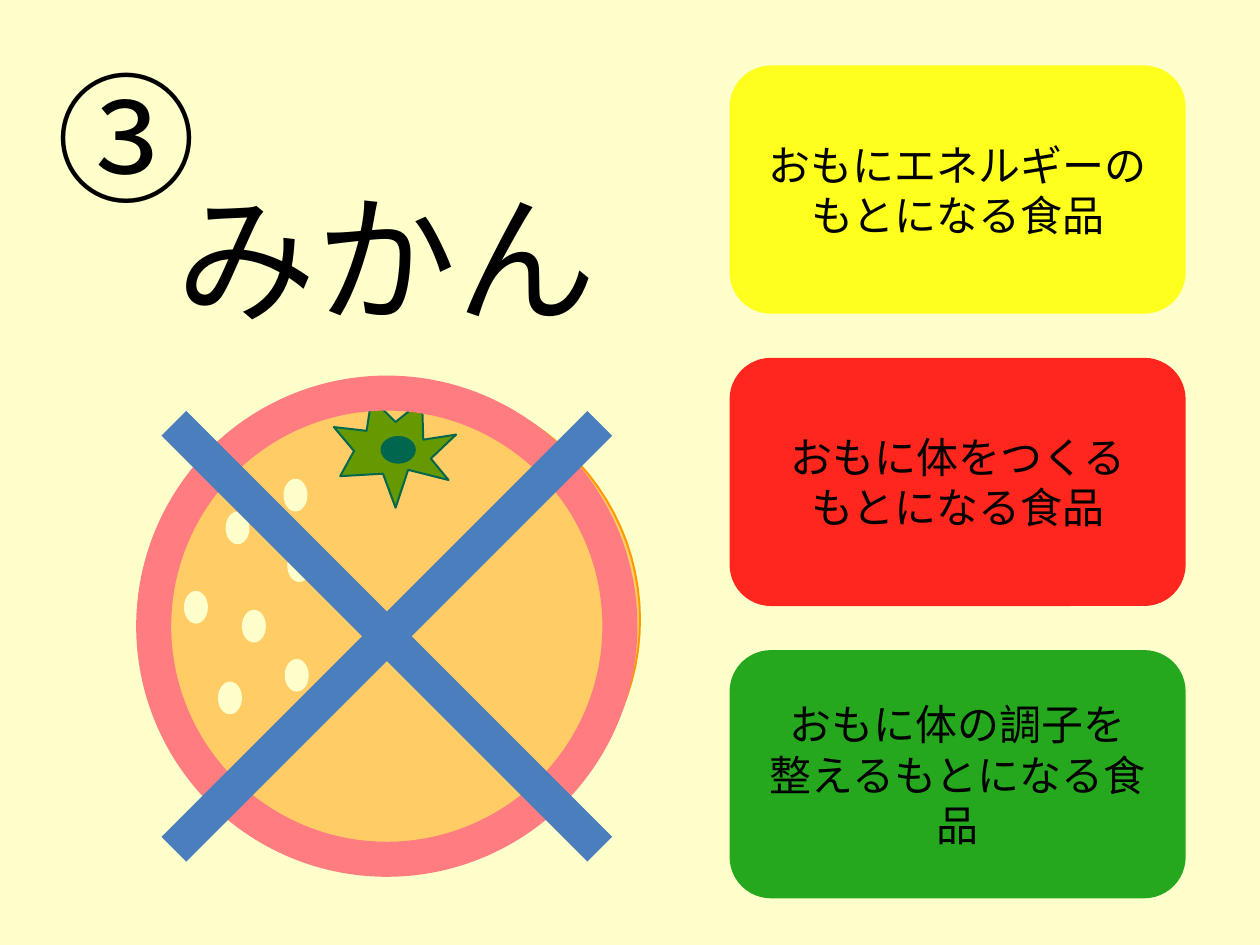
from lxml import etree
from pptx import Presentation
from pptx.dml.color import RGBColor
from pptx.enum.shapes import MSO_CONNECTOR, MSO_SHAPE
from pptx.enum.text import MSO_ANCHOR, MSO_AUTO_SIZE, PP_ALIGN
from pptx.oxml.ns import qn
from pptx.util import Inches, Pt

OVAL = MSO_SHAPE.OVAL
ROUNDED = MSO_SHAPE.ROUNDED_RECTANGLE
STRAIGHT = MSO_CONNECTOR.STRAIGHT
MIDDLE = MSO_ANCHOR.MIDDLE
GROW = MSO_AUTO_SIZE.SHAPE_TO_FIT_TEXT
LEFT, CENTER = PP_ALIGN.LEFT, PP_ALIGN.CENTER

FONT = "Noto Sans CJK JP"
CREAM = RGBColor(0xFF, 0xFF, 0xCC)
BLACK = RGBColor(0, 0, 0)
YELLOW = RGBColor(0xFF, 0xFF, 0)
RED = RGBColor(0xFF, 0, 0)
GREEN = RGBColor(0, 0x99, 0)
PEEL = RGBColor(0xFF, 0xCC, 0x66)
PEEL_EDGE = RGBColor(0xFF, 0x99, 0)
LEAF = RGBColor(0x66, 0x99, 0)
LEAF_EDGE = RGBColor(0, 0x66, 0x4D)
PINK = RGBColor(0xFF, 0x7C, 0x80)
BLUE = RGBColor(0x4B, 0x7E, 0xBC)

PEEL_START = (0.98, 3.53)
PEEL_CURVES = [
    ((0.38, 3.22), (0, 2.56), (0, 1.88)),
    ((0, 0.84), (0.87, 0), (1.92, 0)),
    ((2.99, 0), (3.86, 0.84), (3.86, 1.88)),
    ((3.86, 2.85), (3.09, 3.69), (2.1, 3.76)),
]
LEAF_POINTS = [
    (1.73, 0.12), (1.92, 0.31), (2.13, 0.14), (2.14, 0.45), (2.4, 0.41),
    (2.2, 0.6), (2.34, 0.77), (2.02, 0.69), (1.92, 0.99), (1.82, 0.72),
    (1.48, 0.74), (1.59, 0.54), (1.43, 0.35), (1.69, 0.38),
]
PORES = [
    (1.03, 0.76), (0.57, 1.02), (1.06, 1.32), (0.7, 1.8),
    (0.24, 1.65), (0.51, 2.37), (0.89, 2.77), (1.04, 2.19),
]
GROUPS = [
    (YELLOW, ["おもにエネルギーの", "もとになる食品"]),
    (RED, ["おもに体をつくる", "もとになる食品"]),
    (GREEN, ["おもに体の調子を", "整えるもとになる食品"]),
]


def curve_points(start, curves, steps=24):
    points = [start]
    for first, second, end in curves:
        begin = points[-1]
        for step in range(1, steps + 1):
            t = step / steps
            points.append(tuple(
                (1 - t) ** 3 * a + 3 * t * (1 - t) ** 2 * b
                + 3 * t ** 2 * (1 - t) * c + t ** 3 * d
                for a, b, c, d in zip(begin, first, second, end)))
    return points


def style_shape(shape, fill=None, line=None, weight=1.13):
    shape.shadow.inherit = False
    if fill is None:
        shape.fill.background()
    else:
        shape.fill.solid()
        shape.fill.fore_color.rgb = fill
    if line is None:
        shape.line.fill.background()
    else:
        shape.line.color.rgb = line
        shape.line.width = Pt(weight)


def add_oval(page, left, top, width, height, **style):
    oval = page.shapes.add_shape(
        OVAL, Inches(left), Inches(top), Inches(width), Inches(height))
    style_shape(oval, **style)


def add_outline(page, left, top, points, fill, line):
    corners = [(Inches(left + x), Inches(top + y)) for x, y in points]
    builder = page.shapes.build_freeform(*corners[0])
    builder.add_line_segments(corners[1:], close=True)
    style_shape(builder.convert_to_shape(), fill, line)


def write_lines(frame, lines, size, align):
    frame.word_wrap = True
    frame.text = "\n".join(lines)
    for para in frame.paragraphs:
        para.alignment = align
        for span in para.runs:
            span.font.size = Pt(size)
            span.font.name = FONT
            span.font.color.rgb = BLACK
            east_asian = etree.SubElement(span.font._element, qn("a:ea"))
            east_asian.set("typeface", FONT)


def add_mandarin(page, left, top):
    peel = curve_points(PEEL_START, PEEL_CURVES)
    add_outline(page, left, top, peel, PEEL, PEEL_EDGE)
    add_outline(page, left, top, LEAF_POINTS, LEAF, LEAF_EDGE)
    add_oval(page, left + 1.8, top + 0.42, 0.28, 0.22, fill=LEAF_EDGE)
    for x, y in PORES:
        add_oval(page, left + x, top + y, 0.19, 0.26, fill=CREAM)


def add_food_groups(page, left, top, width, height, gap):
    for index, (color, lines) in enumerate(GROUPS):
        box = page.shapes.add_shape(
            ROUNDED, Inches(left), Inches(top + index * (height + gap)),
            Inches(width), Inches(height))
        style_shape(box, color)
        tint = box._element.spPr.find(qn("a:solidFill")).find(qn("a:srgbClr"))
        etree.SubElement(tint, qn("a:alpha")).set("val", "85000")
        box.text_frame.vertical_anchor = MIDDLE
        write_lines(box.text_frame, lines, 24, CENTER)


def add_heading(page, left, top, width, height, text, align):
    box = page.shapes.add_textbox(
        Inches(left), Inches(top), Inches(width), Inches(height))
    write_lines(box.text_frame, [text], 80, align)
    box.text_frame.auto_size = GROW


def add_cross(page, left, top, side):
    right, bottom = left + side, top + side
    for start, end in ((top, bottom), (bottom, top)):
        bar = page.shapes.add_connector(
            STRAIGHT, Inches(right), Inches(start), Inches(left), Inches(end))
        bar.line.color.rgb = BLUE
        bar.line.width = Pt(20)
        etree.SubElement(bar._element.spPr, qn("a:effectLst"))


def main():
    deck = Presentation()
    deck.slide_width, deck.slide_height = Inches(10), Inches(7.5)
    page = deck.slides.add_slide(deck.slide_layouts[6])
    page.background.fill.solid()
    page.background.fill.fore_color.rgb = CREAM
    add_mandarin(page, 1.22, 3.04)
    add_food_groups(page, 5.79, 0.52, 3.62, 1.97, 0.35)
    add_heading(page, 0.35, 0.36, 1.89, 1.45, "③", LEFT)
    add_heading(page, 0.51, 1.31, 5.12, 1.45, "みかん", CENTER)
    add_oval(page, 1.22, 3.12, 3.7, 3.7, line=PINK, weight=20)
    add_cross(page, 1.38, 3.36, 3.38)
    deck.save("out.pptx")


if __name__ == "__main__":
    main()
